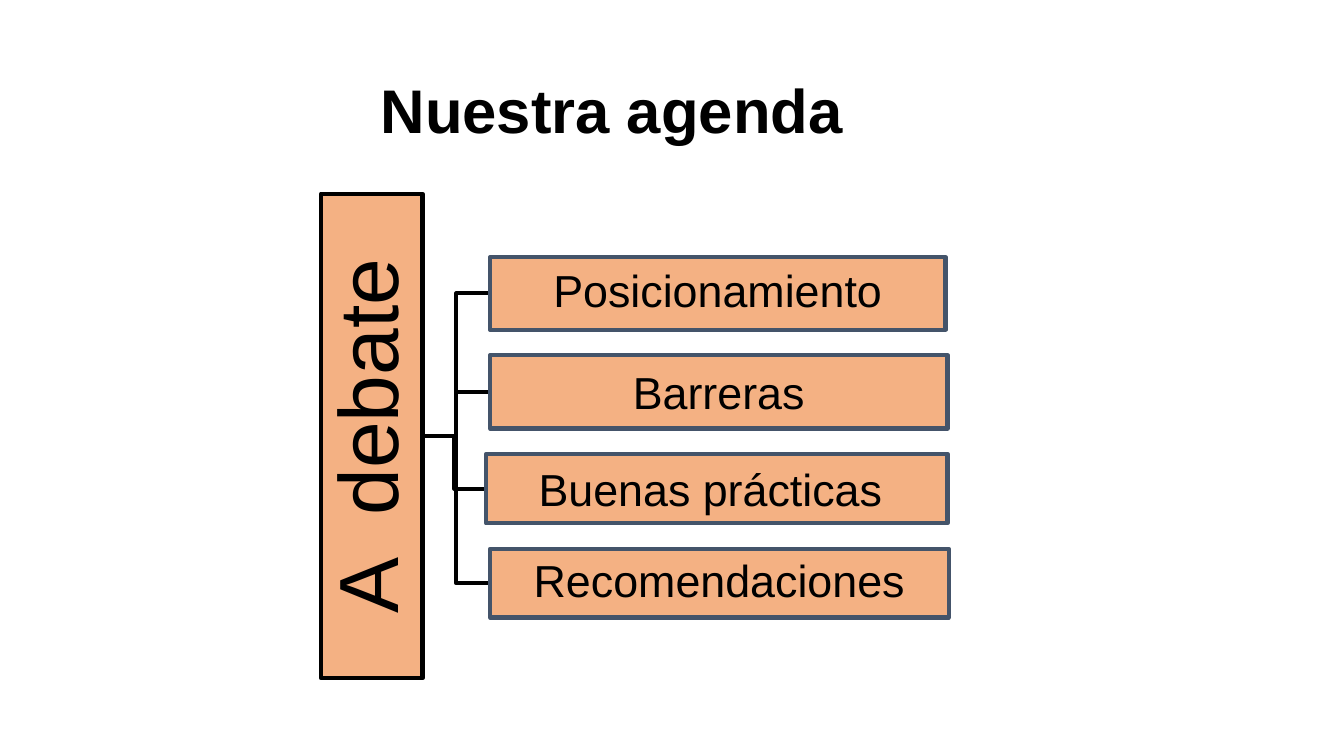
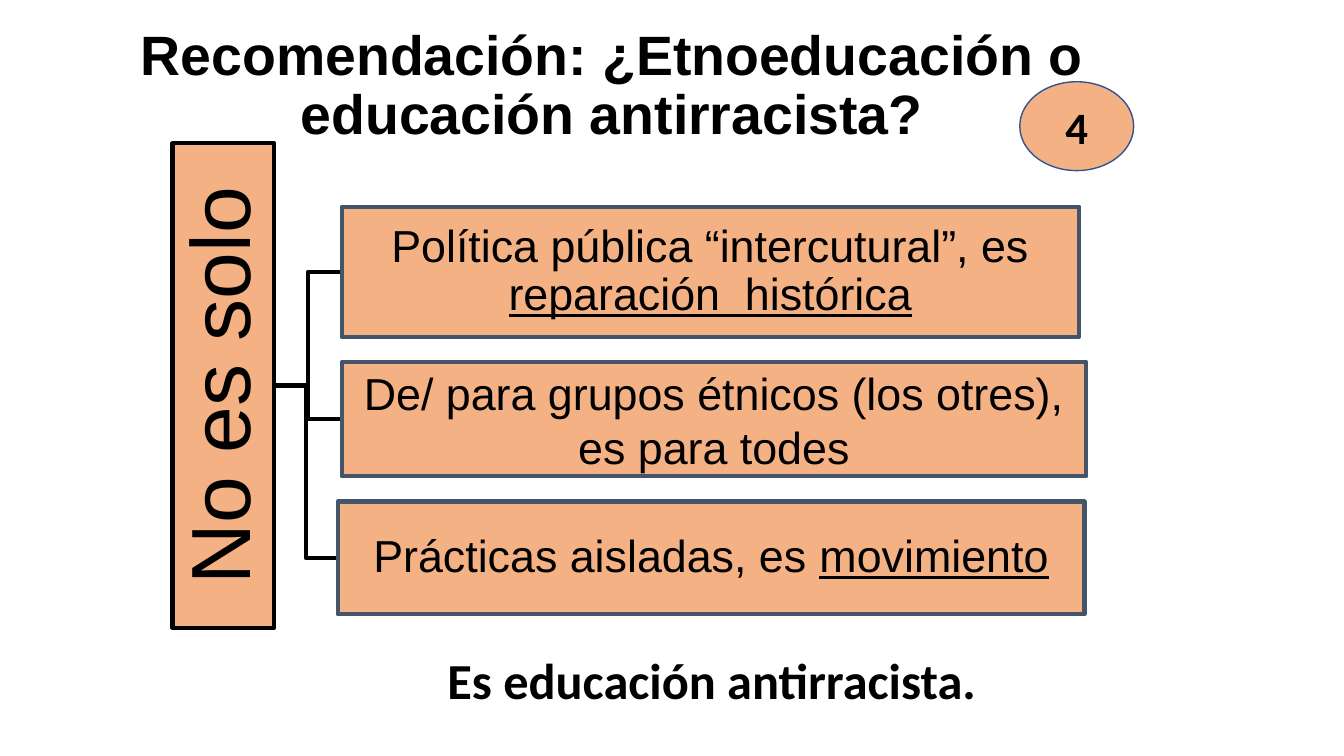
from pptx import Presentation
from pptx.dml.color import RGBColor
from pptx.enum.shapes import MSO_CONNECTOR, MSO_SHAPE
from pptx.enum.text import MSO_ANCHOR, MSO_AUTO_SIZE, PP_ALIGN
from pptx.oxml.ns import qn
from pptx.util import Cm, Pt
from lxml.etree import SubElement

BLACK = RGBColor(0x00, 0x00, 0x00)
PEACH = RGBColor(0xF4, 0xB1, 0x83)
SLATE = RGBColor(0x44, 0x54, 0x6A)
BLUE = RGBColor(0x32, 0x54, 0x91)

ROOT_W, ROOT_H = 2.56, 12.21   # upright root bar
REACH = 1.7                    # from root bar to branches
FIRST, GAP = 1.6, 0.64         # offset of the first branch, space between


def write(frame, text, size=32, font="Arial", bold=False, under="",
          space=1.0, anchor=MSO_ANCHOR.MIDDLE, inset=None):
    """Put centred text in a frame; the words in `under` end it underlined."""
    frame.word_wrap = True
    frame.auto_size = MSO_AUTO_SIZE.NONE
    frame.vertical_anchor = anchor
    if inset is not None:
        frame.margin_left = frame.margin_right = Cm(inset)
        frame.margin_top = frame.margin_bottom = Cm(inset)
    para = frame.paragraphs[0]
    para.alignment = PP_ALIGN.CENTER
    para.line_spacing = space
    for part, line in ((text, False), (under, True)):
        if part:
            run = para.add_run()
            run.text = part
            face = run.font
            face.name, face.size, face.bold = font, Pt(size), bold
            face.color.rgb = BLACK
            if line:
                face.underline = True


def block(slide, kind, left, top, width, height, edge, weight=3):
    """Add a peach shape with a coloured outline."""
    shape = slide.shapes.add_shape(kind, Cm(left), Cm(top), Cm(width), Cm(height))
    shape.shadow.inherit = False
    shape.fill.solid()
    shape.fill.fore_color.rgb = PEACH
    shape.line.color.rgb = edge
    shape.line.width = Pt(weight)
    return shape


def elbow(slide, x1, y1, x2, y2):
    """Join two points with a bent line."""
    link = slide.shapes.add_connector(
        MSO_CONNECTOR.ELBOW, Cm(x1), Cm(y1), Cm(x2), Cm(y2))
    link.line.color.rgb = BLACK
    link.line.width = Pt(3)
    SubElement(link._element.spPr, qn("a:effectLst"))


def title(slide, text, size):
    head = slide.shapes.title
    head.left, head.top, head.width, head.height = Cm(2.67), Cm(0.3), Cm(25.5), Cm(3.53)
    write(head.text_frame, text, size=size, bold=True, space=0.9,
          anchor=MSO_ANCHOR.BOTTOM)


def tree(slide, left, top, label, items):
    """Draw a root bar at left, top, and its stack of branches.

    Each item is width, height, shift to the left, text and text format.
    """
    edge, mid = left + ROOT_W, top + ROOT_H / 2
    # Root bar, turned to read upwards
    root = block(slide, MSO_SHAPE.RECTANGLE, edge - (ROOT_W + ROOT_H) / 2,
                 mid - ROOT_W / 2, ROOT_H, ROOT_W, BLACK)
    root.rotation = 270
    write(root.text_frame, label, size=60, space=0.9, inset=0.1)
    # Branches, each with its link
    y = top + FIRST
    for width, height, shift, text, style in items:
        x = edge + REACH - shift
        elbow(slide, edge, mid, x, y + height / 2)
        box = block(slide, MSO_SHAPE.RECTANGLE, x, y, width, height, SLATE)
        write(box.text_frame, text, inset=0.05, **style)
        y += height + GAP


def badge(slide, left, top, text):
    disc = block(slide, MSO_SHAPE.OVAL, left, top, 2.87, 2.24, BLUE, weight=1)
    write(disc.text_frame, text, font="Calibri", bold=True)


def closing(slide, left, top, text):
    note = slide.shapes.add_textbox(Cm(left), Cm(top), Cm(28.88), Cm(1.8))
    write(note.text_frame, text, size=36, font="Calibri", bold=True,
          anchor=MSO_ANCHOR.TOP)


def agenda(slide):
    title(slide, "Nuestra agenda", 44)
    tight = {"space": 0.9}
    tree(slide, 8.09, 4.88, "A  debate", [
        (11.48, 1.83, 0, "Posicionamiento", tight),
        (11.53, 1.85, 0, "Barreras", {}),
        (11.63, 1.75, 0.1, "Buenas prácticas ", {}),
        (11.56, 1.73, 0, "Recomendaciones", tight),
    ])


def advice(slide):
    title(slide, "Recomendación: ¿Etnoeducación o educación antirracista?", 39.6)
    tree(slide, 4.35, 3.61, "No es solo", [
        (18.59, 3.28, 0, "Política pública “intercutural”, es ",
         {"under": "reparación  histórica", "space": 0.9}),
        (18.77, 2.87, 0, "De/ para grupos étnicos (los otres), es para todes", {}),
        (18.82, 2.84, 0.1, "Prácticas aisladas, es ",
         {"under": "movimiento", "space": 0.9}),
    ])
    closing(slide, 3.5, 16.23, "Es educación antirracista.")
    badge(slide, 25.7, 2.06, "4")


def main():
    deck = Presentation()
    deck.slide_width, deck.slide_height = Cm(33.87), Cm(19.05)
    for fill in (agenda, advice):
        fill(deck.slides.add_slide(deck.slide_layouts[5]))
    deck.save("out.pptx")


if __name__ == "__main__":
    main()
